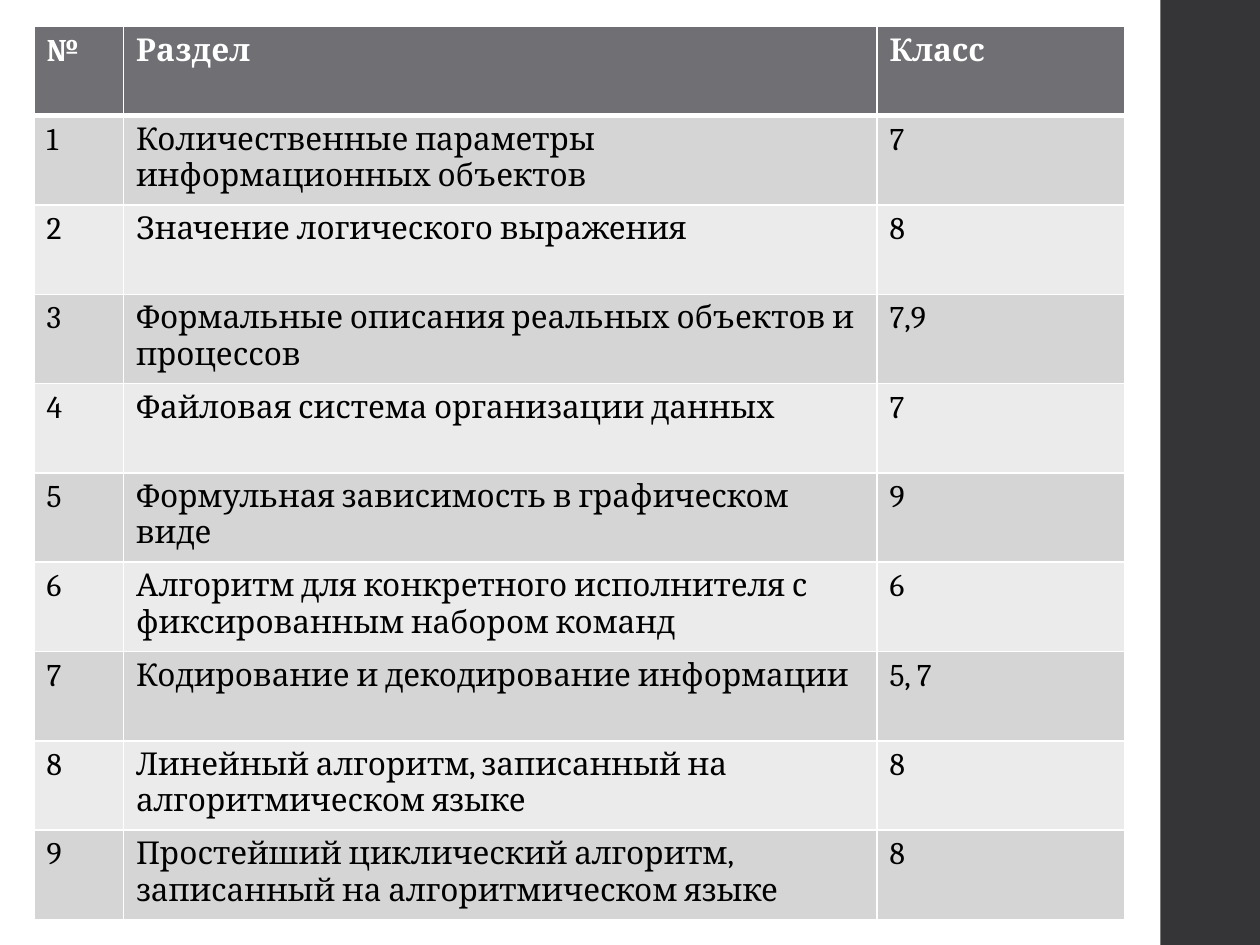
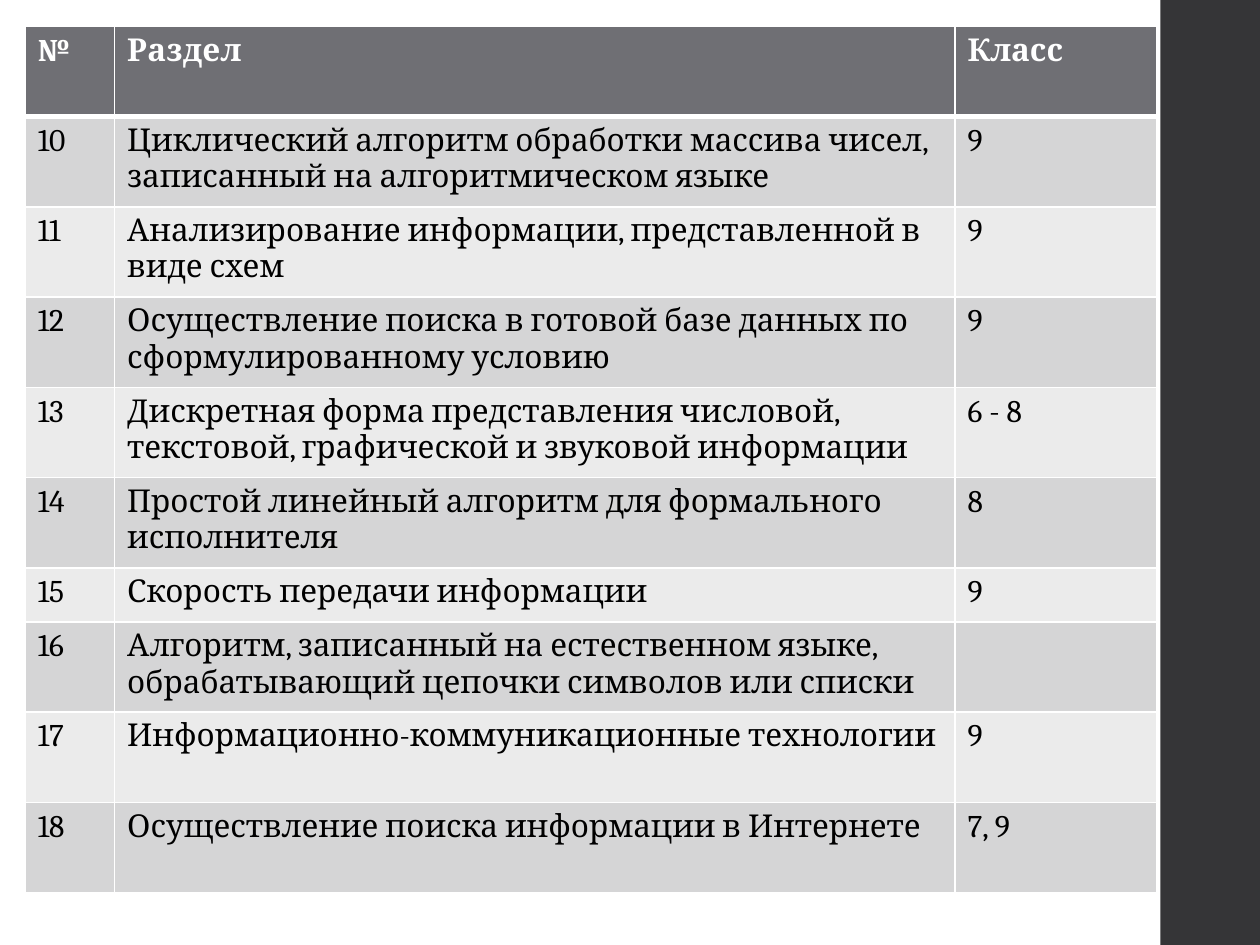
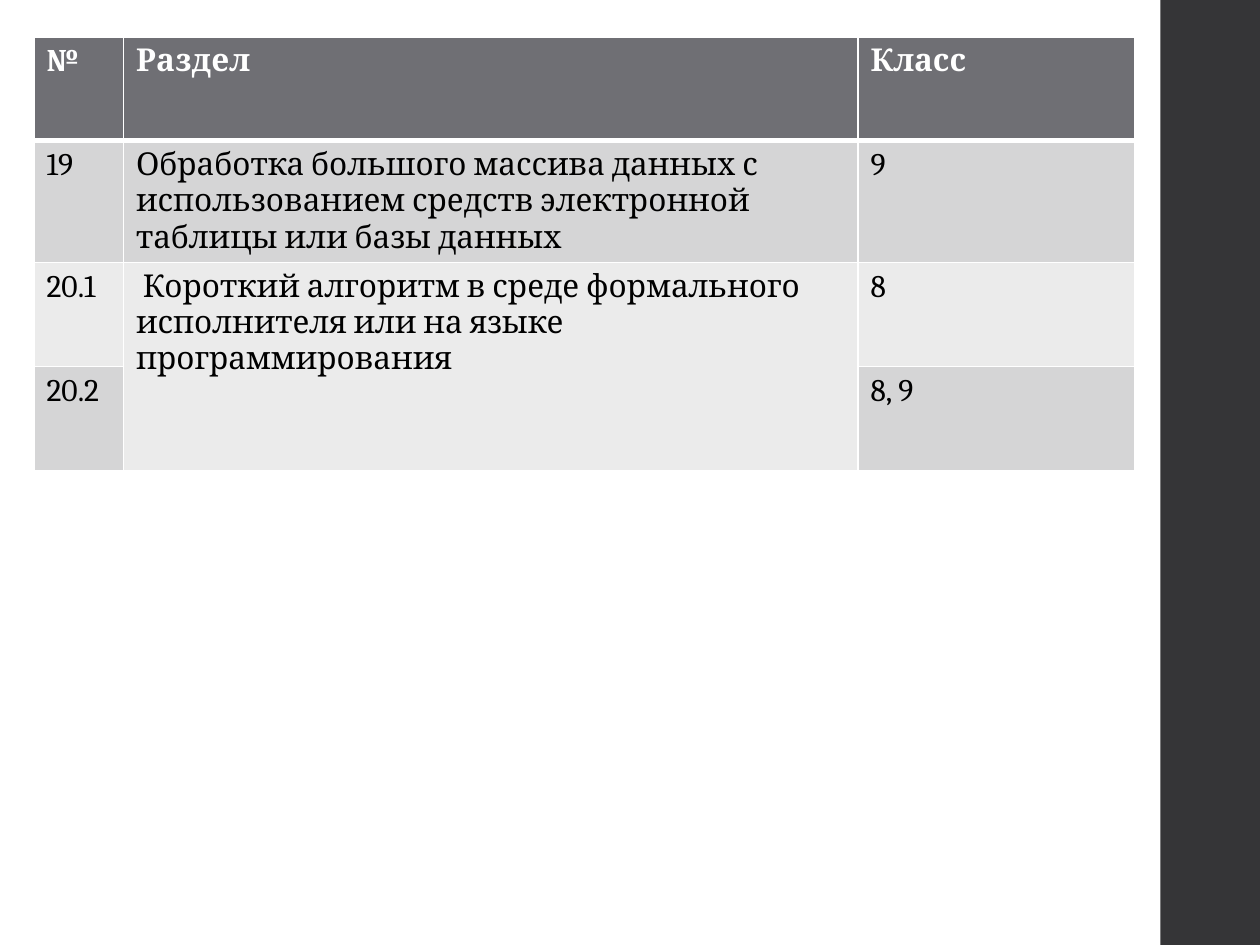
"""Build three slides that list exam sections with the school grade of each."""
from dataclasses import dataclass

from lxml.etree import SubElement
from pptx import Presentation
from pptx.dml.color import RGBColor as RGB
from pptx.enum.shapes import MSO_SHAPE as SHAPE
from pptx.oxml.ns import qn
from pptx.util import Inches, Pt

SLIDE_W, SLIDE_H = Inches(10), Inches(7.5)
HEADER = ("№", "Раздел", "Класс")

FIRST_SECTIONS = [
    ("1", "Количественные параметры информационных объектов", "7"),
    ("2", "Значение логического выражения", "8"),
    ("3", "Формальные описания реальных объектов и процессов", "7,9"),
    ("4", "Файловая система организации данных", "7"),
    ("5", "Формульная зависимость в графическом виде", "9"),
    ("6", "Алгоритм для конкретного исполнителя с фиксированным набором команд", "6"),
    ("7", "Кодирование и декодирование информации", "5, 7"),
    ("8", "Линейный алгоритм, записанный на алгоритмическом языке", "8"),
    ("9", "Простейший циклический алгоритм, записанный на алгоритмическом языке", "8"),
]
MIDDLE_SECTIONS = [
    ("10", "Циклический алгоритм обработки массива чисел, записанный на алгоритмическом языке", "9"),
    ("11", "Анализирование информации, представленной в виде схем", "9"),
    ("12", "Осуществление поиска в готовой базе данных по сформулированному условию", "9"),
    ("13", "Дискретная форма представления числовой, текстовой, графической и звуковой информации", "6 - 8"),
    ("14", "Простой линейный алгоритм для формального исполнителя", "8"),
    ("15", "Скорость передачи информации", "9"),
    ("16", "Алгоритм, записанный на естественном языке, обрабатывающий цепочки символов или списки", ""),
    ("17", "Информационно-коммуникационные технологии", "9"),
    ("18", "Осуществление поиска информации в Интернете", "7, 9"),
]
LAST_SECTIONS = [
    ("19", "Обработка большого массива данных с использованием средств электронной таблицы или базы данных", "9"),
    ("20.1", " Короткий алгоритм в среде формального исполнителя или на языке программирования", "8"),
    ("20.2", "", "8, 9"),
]


@dataclass(frozen=True)
class Theme:
    """Colours, font and sizes shared by the slides."""
    band: str = "353537"
    header: str = "6F6F74"
    rows: tuple = ("EBEBEB", "D5D5D6")
    line: str = "FFFFFF"
    header_text: str = "FFFFFF"
    text: str = "000000"
    font: str = "Cambria"
    size: int = 18
    thin: int = 1
    thick: int = 3


THEME = Theme()


def across(percent):
    """Return a share of the slide width."""
    return round(SLIDE_W * percent / 100)


def down(percent):
    """Return a share of the slide height."""
    return round(SLIDE_H * percent / 100)


def add_side_band(s, layout):
    """Draw the dark right band and place it on the shared layout."""
    left = across(92.1)
    band = s.shapes.add_shape(SHAPE.RECTANGLE, left, 0, SLIDE_W - left, SLIDE_H)
    band.shadow.inherit = False
    band.fill.solid()
    band.fill.fore_color.rgb = RGB.from_string(THEME.band)
    band.line.fill.background()
    layout.shapes.element.append(band.element)


def write(tf, text, *, color, bold=False):
    """Put formatted text into a text frame."""
    p = tf.paragraphs[0]
    p.font.size = Pt(THEME.size)
    if text:
        r = p.add_run()
        r.text = text
        r.font.name, r.font.size, r.font.bold = THEME.font, Pt(THEME.size), bold
        r.font.color.rgb = RGB.from_string(color)


def set_borders(cell, **widths):
    """Give a cell solid borders, with widths in points by side."""
    props = cell._tc.get_or_add_tcPr()
    for side in "LRTB":
        ln = SubElement(props, qn(f"a:ln{side}"), w=str(Pt(widths.get(side, THEME.thin))))
        SubElement(SubElement(ln, qn("a:solidFill")), qn("a:srgbClr"), val=THEME.line)


def format_cell(cell, row, text):
    """Style one cell as header or as a banded row."""
    is_header = row == 0
    thick_side = {0: "B", 1: "T"}.get(row)
    set_borders(cell, **({thick_side: THEME.thick} if thick_side else {}))
    cell.fill.solid()
    cell.fill.fore_color.rgb = RGB.from_string(THEME.header if is_header else THEME.rows[row % 2])
    write(cell.text_frame, text, color=THEME.header_text if is_header else THEME.text, bold=is_header)


def add_section_table(s, sections, *, left, top, cols, row_height, short_rows=()):
    """Add a section table placed in percent of the slide and return it."""
    rows = [HEADER, *sections]
    heights = [down(5.73 if i in short_rows else row_height) for i in range(len(rows))]
    widths = [across(c) for c in cols]
    table = s.shapes.add_table(len(rows), len(cols), across(left), down(top),
                               sum(widths), sum(heights)).table
    for column, width in zip(table.columns, widths):
        column.width = width
    for i, (values, height) in enumerate(zip(rows, heights)):
        table.rows[i].height = height
        for j, text in enumerate(values):
            format_cell(table.cell(i, j), i, text)
    return table


def main():
    """Build and save the presentation."""
    prs = Presentation()
    prs.slide_width, prs.slide_height = SLIDE_W, SLIDE_H
    layout = prs.slide_layouts[6]
    first, middle, last = (prs.slides.add_slide(layout) for _ in range(3))
    add_side_band(first, layout)
    add_section_table(first, FIRST_SECTIONS, left=2.7, top=2.8,
                      cols=(7.1, 59.8, 19.7), row_height=9.45)
    add_section_table(middle, MIDDLE_SECTIONS, left=2, top=2.8,
                      cols=(7.1, 66.7, 16), row_height=9.55, short_rows=(6,))
    table = add_section_table(last, LAST_SECTIONS, left=2.7, top=3.9,
                              cols=(7.1, 58.3, 22), row_height=11)
    table.cell(2, 1).merge(table.cell(3, 1))
    prs.save("out.pptx")


if __name__ == "__main__":
    main()
